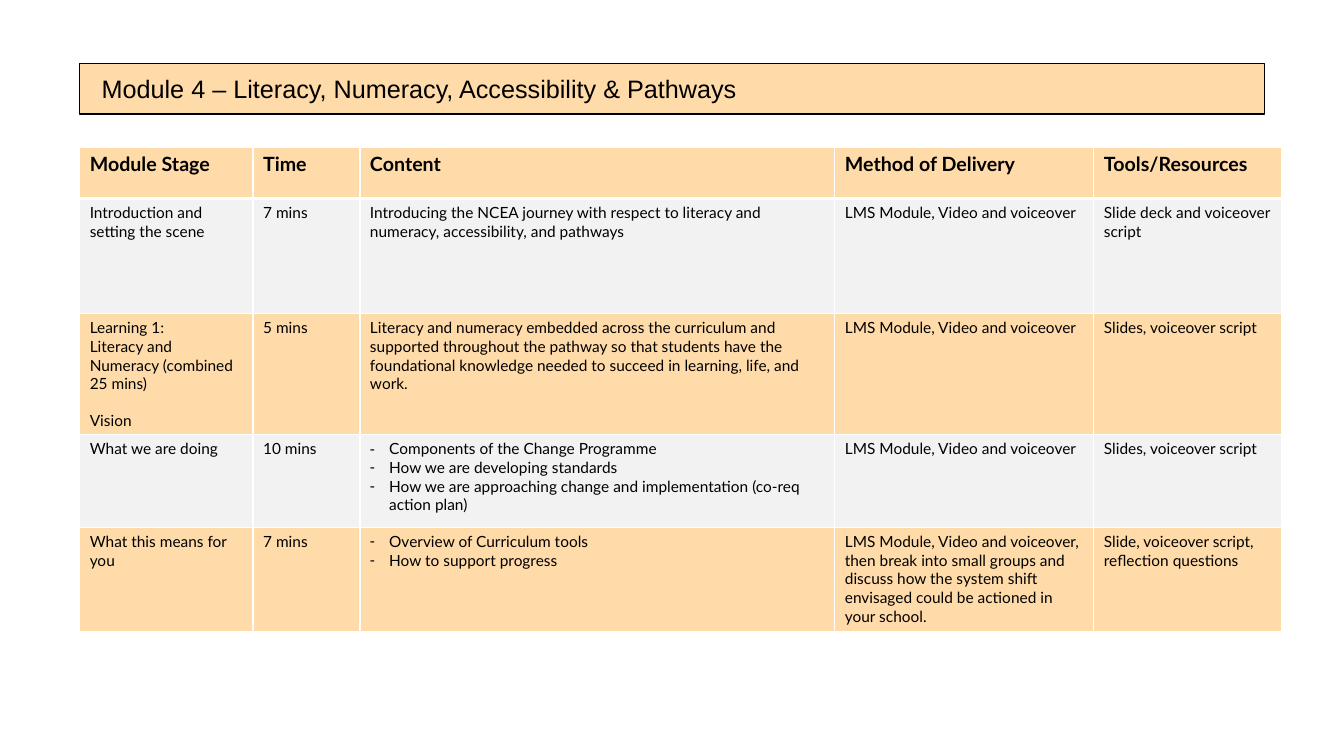
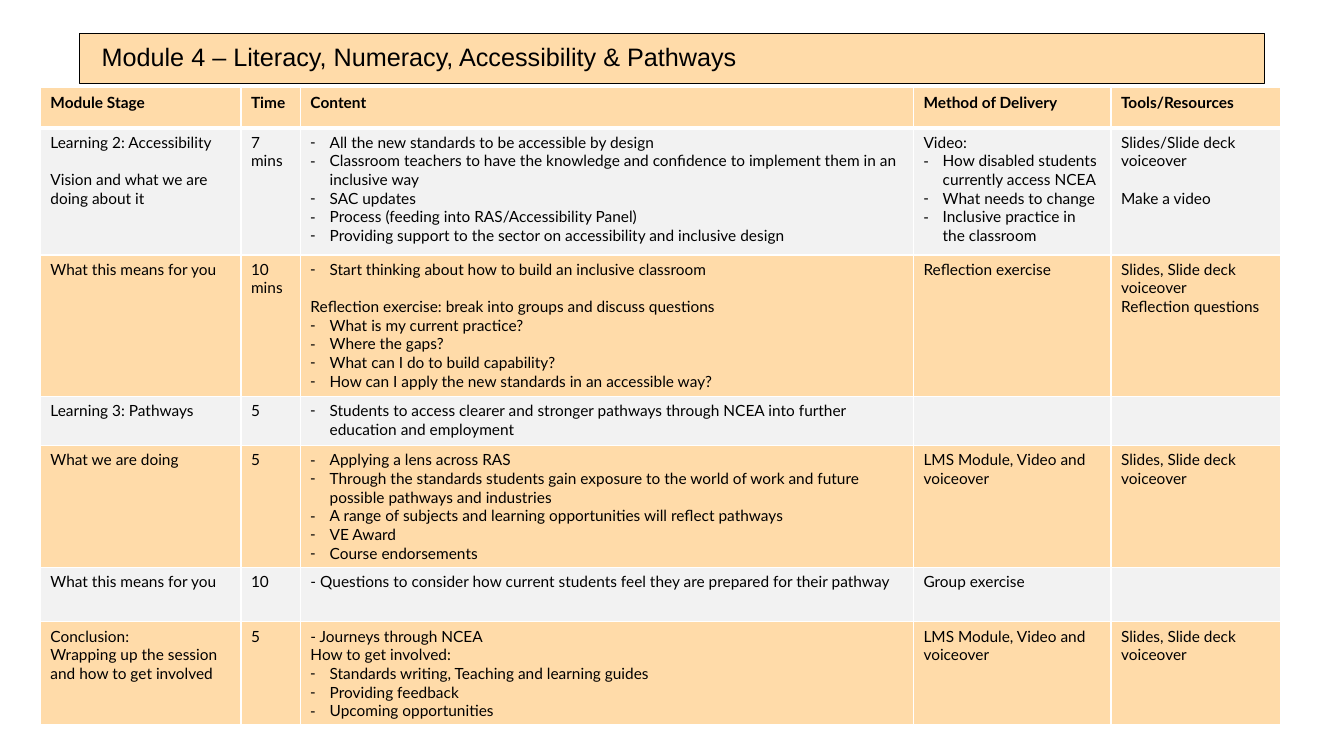
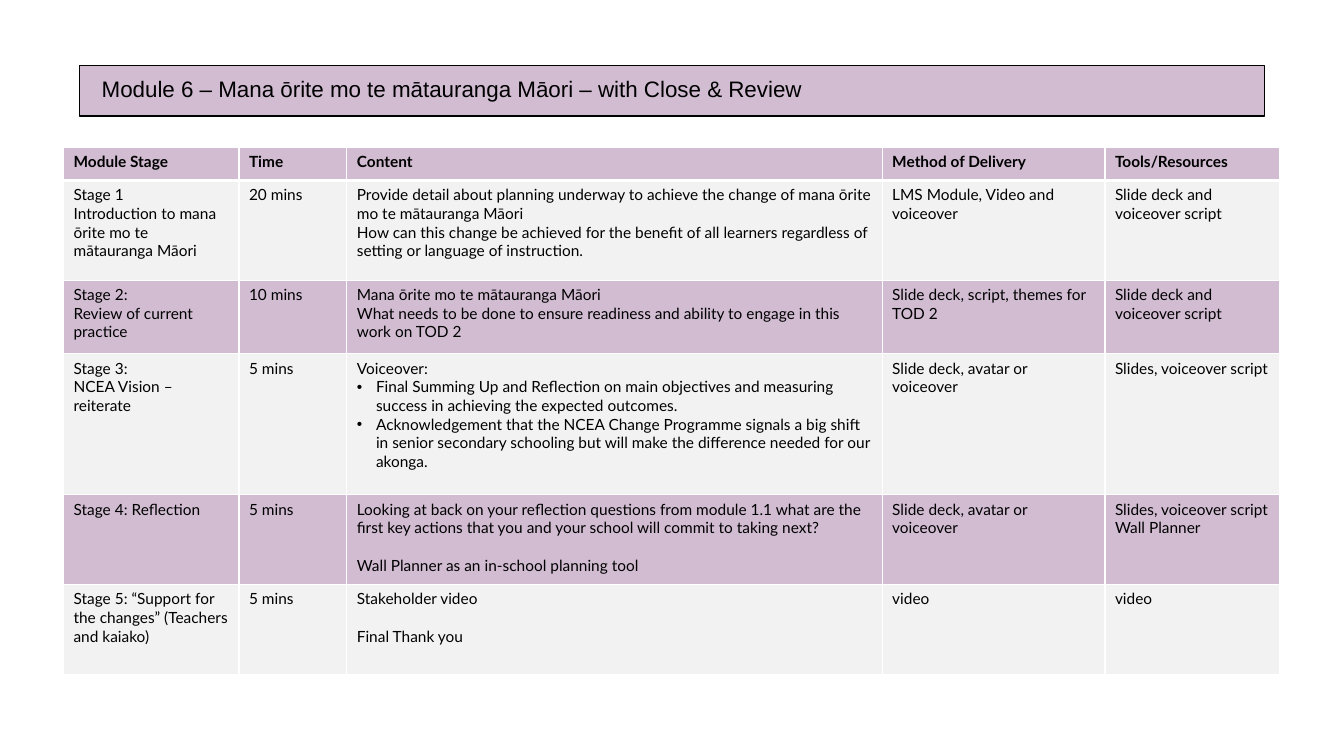
"""Build three module plan slides, each with a title bar and a table."""
import pptx
import pptx.dml.color
import pptx.enum.shapes
import pptx.enum.text
import pptx.oxml
import pptx.oxml.ns
import pptx.util

Inches = pptx.util.Inches
Pt = pptx.util.Pt
RGBColor = pptx.dml.color.RGBColor

BLACK = RGBColor(0x00, 0x00, 0x00)
WHITE = RGBColor(0xFF, 0xFF, 0xFF)
GREY = RGBColor(0xF2, 0xF2, 0xF2)
PEACH = RGBColor(0xFF, 0xDB, 0xA9)
MAUVE = RGBColor(0xD1, 0xBC, 0xD2)

BODY = 11
GAP = 13.3
MARKS = {"* ": "-", "• ": "•"}
HEADS = ["Module Stage", "Time", "Content", "Method of Delivery", "Tools/Resources"]
LMS = "LMS Module, Video and voiceover"
DECK = "Slide deck and voiceover script"
SLIDES = "Slides, voiceover script"
SPOKEN = "Slides, Slide deck voiceover"
AVATAR = "Slide deck, avatar or voiceover"
MEANS = "What this means for you"
DOING = "What we are doing"
LITERACY = "Module 4 – Literacy, Numeracy, Accessibility & Pathways"
MANA = "Module 6 – Mana ōrite mo te mātauranga Māori – with Close & Review"

INTRO = [
    ["Introduction and setting the scene", "7 mins",
     "Introducing the NCEA journey with respect to literacy and numeracy, "
     "accessibility, and pathways", LMS, DECK],
    ["Learning 1:\nLiteracy and Numeracy (combined 25 mins)\n\nVision", "5 mins",
     "Literacy and numeracy embedded across the curriculum and supported "
     "throughout the pathway so that students have the foundational knowledge "
     "needed to succeed in learning, life, and work.", LMS, SLIDES],
    [DOING, "10 mins",
     "* Components of the Change Programme\n"
     "* How we are developing standards\n"
     "* How we are approaching change and implementation (co-req action plan)",
     LMS, SLIDES],
    [MEANS, "7 mins",
     "* Overview of Curriculum tools\n* How to support progress",
     LMS + ", then break into small groups and discuss how the system shift "
     "envisaged could be actioned in your school.",
     "Slide, voiceover script, reflection questions"],
]

ACCESS = [
    ["Learning 2: Accessibility\n\nVision and what we are doing about it", "7 mins",
     "* All the new standards to be accessible by design\n"
     "* Classroom teachers to have the knowledge and confidence to implement "
     "them in an inclusive way\n"
     "* SAC updates\n"
     "* Process (feeding into RAS/Accessibility Panel)\n"
     "* Providing support to the sector on accessibility and inclusive design",
     "Video:\n"
     "* How disabled students currently access NCEA\n"
     "* What needs to change\n"
     "* Inclusive practice in the classroom",
     "Slides/Slide deck voiceover\n\nMake a video"],
    [MEANS, "10 mins",
     "* Start thinking about how to build an inclusive classroom\n\n"
     "Reflection exercise: break into groups and discuss questions\n"
     "* What is my current practice?\n"
     "* Where the gaps?\n"
     "* What can I do to build capability?\n"
     "* How can I apply the new standards in an accessible way?",
     "Reflection exercise", SPOKEN + "\nReflection questions"],
    ["Learning 3: Pathways", "5",
     "* Students to access clearer and stronger pathways through NCEA into "
     "further education and employment", "", ""],
    [DOING, "5",
     "* Applying a lens across RAS\n"
     "* Through the standards students gain exposure to the world of work and "
     "future possible pathways and industries\n"
     "* A range of subjects and learning opportunities will reflect pathways\n"
     "* VE Award\n"
     "* Course endorsements", LMS, SPOKEN],
    [MEANS, "10",
     "- Questions to consider how current students feel they are prepared for "
     "their pathway", "Group exercise", ""],
    ["Conclusion:\nWrapping up the session and how to get involved", "5",
     "- Journeys through NCEA\n"
     "How to get involved:\n"
     "* Standards writing, Teaching and learning guides\n"
     "* Providing feedback\n"
     "* Upcoming opportunities", LMS, SPOKEN],
]

REVIEW = [
    ["Stage 1\nIntroduction to mana ōrite mo te mātauranga Māori", "20 mins",
     "Provide detail about planning underway to achieve the change of mana "
     "ōrite mo te mātauranga Māori\n"
     "How can this change be achieved for the benefit of all learners "
     "regardless of setting or language of instruction.", LMS, DECK],
    ["Stage 2:\nReview of current practice", "10 mins",
     "Mana ōrite mo te mātauranga Māori\n"
     "What needs to be done to ensure readiness and ability to engage in this "
     "work on TOD 2", "Slide deck, script, themes for TOD 2", DECK],
    ["Stage 3:\nNCEA Vision – reiterate", "5 mins",
     "Voiceover:\n"
     "• Final Summing Up and Reflection on main objectives and measuring "
     "success in achieving the expected outcomes.\n"
     "• Acknowledgement that the NCEA Change Programme signals a big shift in "
     "senior secondary schooling but will make the difference needed for our "
     "akonga.", AVATAR, SLIDES],
    ["Stage 4: Reflection", "5 mins",
     "Looking at back on your reflection questions from module 1.1 what are "
     "the first key actions that you and your school will commit to taking "
     "next?\n\nWall Planner as an in-school planning tool",
     AVATAR, SLIDES + "\nWall Planner"],
    ["Stage 5: “Support for the changes” (Teachers and kaiako)", "5 mins",
     "Stakeholder video\n\nFinal Thank you", "video", "video"],
]


def add_xml(parent, tag, body="", **attrs):
    """Append a drawing element with the given inner XML and attributes."""
    pairs = "".join(f' {key}="{val}"' for key, val in attrs.items())
    space = pptx.oxml.ns.nsdecls("a")
    parent.append(pptx.oxml.parse_xml(f"<a:{tag} {space}{pairs}>{body}</a:{tag}>"))


def add_mark(para, mark):
    """Give a paragraph a hanging bullet."""
    props = para._p.get_or_add_pPr()
    props.set("marL", str(Inches(0.19)))
    props.set("indent", str(-Inches(0.19)))
    add_xml(props, "buFont", typeface="Arial")
    add_xml(props, "buChar", char=mark)


def write(frame, text, size=BODY, font="Lato", bold=False, lead=None):
    """Fill a frame; an empty line in the text becomes space before the next."""
    gap = False
    first = True
    for line in text.split("\n"):
        if not line:
            gap = True
            continue
        para = frame.paragraphs[0] if first else frame.add_paragraph()
        first = False
        if lead:
            para.line_spacing = lead
        if gap:
            para.space_before = Pt(GAP)
            gap = False
        mark = MARKS.get(line[:2])
        if mark:
            add_mark(para, mark)
            line = line[2:]
        run = para.add_run()
        run.text = line
        run.font.size = Pt(size)
        run.font.name = font
        run.font.bold = bold
        run.font.color.rgb = BLACK


def add_title(slide, text, size, fill, top, drop):
    """Draw the title bar and its text, set lower by drop."""
    bar = slide.shapes.add_shape(
        pptx.enum.shapes.MSO_SHAPE.RECTANGLE,
        Inches(0.79), Inches(top), Inches(11.75), Inches(0.5))
    bar.shadow.inherit = False
    bar.fill.solid()
    bar.fill.fore_color.rgb = fill
    bar.line.color.rgb = BLACK
    bar.line.width = Pt(1)
    box = slide.shapes.add_textbox(
        Inches(0.91), Inches(top + drop), Inches(11.28), Inches(0.5))
    frame = box.text_frame
    frame.word_wrap = True
    frame.vertical_anchor = pptx.enum.text.MSO_ANCHOR.MIDDLE
    write(frame, text, size=size, font="Arial", lead=0.9)


def style_cell(cell, fill, row):
    """Set the fill and the white borders, thick below the header."""
    props = cell._tc.get_or_add_tcPr()
    widths = {"lnL": 1, "lnR": 1, "lnT": 3 if row == 1 else 1,
              "lnB": 3 if row == 0 else 1}
    paint = f'<a:solidFill><a:srgbClr val="{WHITE}"/></a:solidFill>'
    for side, width in widths.items():
        add_xml(props, side, paint, w=Pt(width))
    cell.fill.solid()
    cell.fill.fore_color.rgb = fill


def add_grid(slide, rows, left, top, cols, highs, fill, size=BODY):
    """Draw the plan table with a header and banded rows."""
    table = slide.shapes.add_table(
        len(highs), len(cols), Inches(left), Inches(top),
        Inches(sum(cols)), Inches(sum(highs))).table
    for col, wide in zip(table.columns, cols):
        col.width = Inches(wide)
    for num, (row, high) in enumerate(zip([HEADS] + rows, highs)):
        table.rows[num].height = Inches(high)
        head = num == 0
        for col, text in enumerate(row):
            cell = table.cell(num, col)
            style_cell(cell, GREY if num % 2 else fill, num)
            write(cell.text_frame, text, size=size if head else BODY, bold=head)


def main():
    """Build and save the deck."""
    deck = pptx.Presentation()
    deck.slide_width = Inches(13.33)
    deck.slide_height = Inches(7.5)
    blank = deck.slide_layouts[6]

    slide = deck.slides.add_slide(blank)
    add_title(slide, LITERACY, 18, PEACH, 0.63, 0.02)
    add_grid(slide, INTRO, 0.79, 1.46, [1.72, 1.06, 4.71, 2.57, 1.86],
             [0.51, 1.14, 1.2, 0.92, 1.03], PEACH, size=14)

    slide = deck.slides.add_slide(blank)
    add_title(slide, LITERACY, 18, PEACH, 0.33, 0)
    add_grid(slide, ACCESS, 0.4, 0.87, [1.99, 0.59, 6.08, 1.96, 1.68],
             [0.4, 1.26, 1.4, 0.49, 1.21, 0.54, 1.02], PEACH)

    slide = deck.slides.add_slide(blank)
    add_title(slide, MANA, 16, MAUVE, 0.65, 0)
    add_grid(slide, REVIEW, 0.63, 1.46, [1.74, 1.07, 5.31, 2.21, 1.73],
             [0.33, 0.99, 0.73, 1.4, 0.89, 0.89], MAUVE)

    deck.save("out.pptx")


if __name__ == "__main__":
    main()
